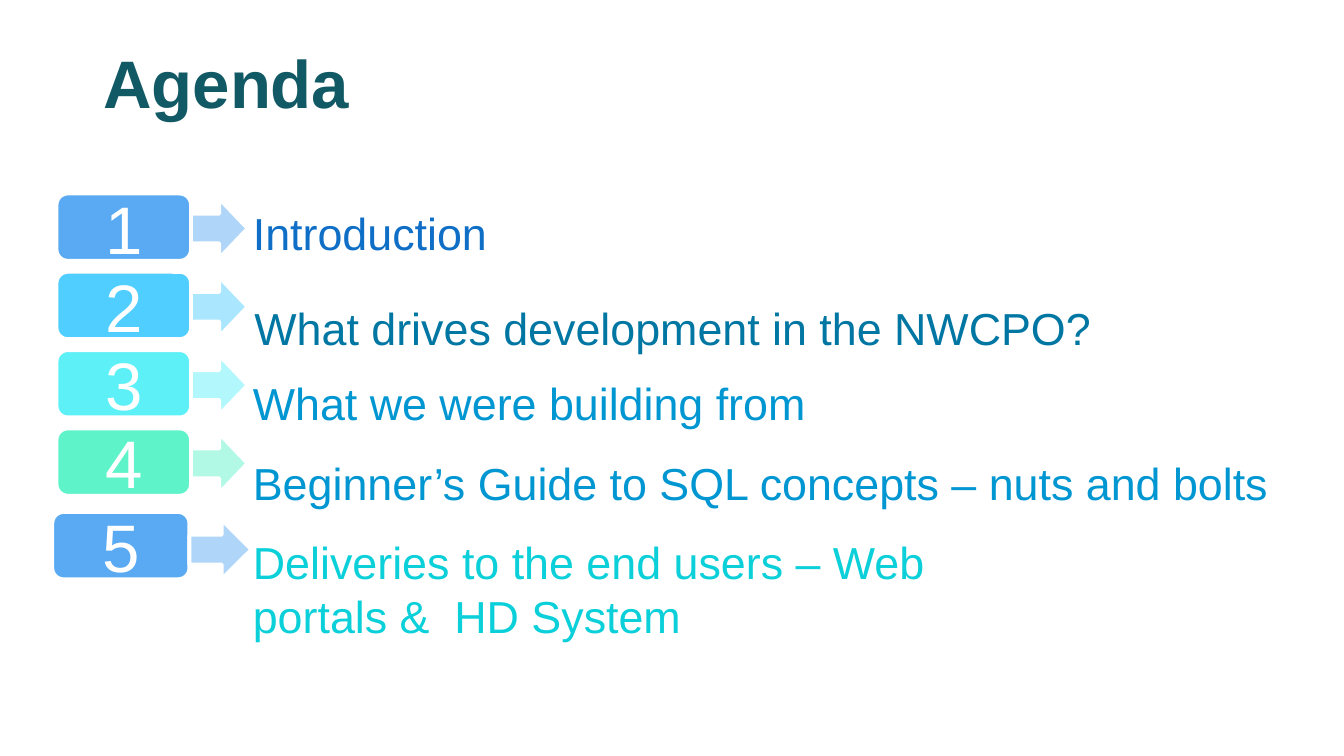
"""Build an agenda slide with five numbered rows."""
from lxml.etree import SubElement
from pptx import Presentation
from pptx.dml.color import RGBColor as Rgb
from pptx.enum.shapes import MSO_SHAPE as Kind
from pptx.enum.text import MSO_ANCHOR as Anchor, PP_ALIGN as Align
from pptx.oxml.ns import qn
from pptx.util import Cm, Pt

HUES = {
    "title": "115964", "white": "FFFFFF",
    "blue": "59AAF2", "sky": "4FCEFF", "aqua": "5EF0F7", "mint": "5FF3CA",
    "navy": "0F6FC6", "teal": "0076A3", "azure": "0096D2", "cyan": "0BD0D9",
}
TITLE = "Agenda"
ROWS = [
    ("Introduction", "blue", "navy", (4.37, 3.71, 18.06, 1.37)),
    ("What drives development in the NWCPO?", "sky", "teal", (4.4, 4.98, 20.04, 1.63)),
    ("What we were building from", "aqua", "azure", (4.37, 6.4, 17.65, 1.78)),
    ("Beginner’s Guide to SQL concepts – nuts and bolts", "mint", "azure",
     (4.37, 7.9, 20.73, 1.8)),
    ("Deliveries to the end users – Web portals &  HD System", "blue", "cyan",
     (4.37, 9.4, 14.48, 2.01)),
]
TOP, STEP = 3.66, 1.48
BADGE = {"left": 1.07, "drop": 0, "wide": 2.54, "high": 1.27}
ARROW = {"left": 3.61, "drop": 0.1, "wide": 1.07, "high": 1.12}
LAST_BADGE = BADGE | {"left": 0.99, "drop": 0.1, "wide": 2.59}
LAST_ARROW = ARROW | {"left": 3.58, "drop": 0.25, "wide": 1.17}
FRAME = {
    "title": {"word_wrap": True, "vertical_anchor": Anchor.MIDDLE},
    "badge": {"word_wrap": True, "vertical_anchor": Anchor.MIDDLE},
    "item": {"word_wrap": True, "vertical_anchor": Anchor.TOP,
             "margin_left": Cm(0.41), "margin_top": Cm(0.71)},
}
FONT = {
    "title": {"name": "Arial", "size": Pt(36), "bold": True},
    "badge": {"name": "Arial", "size": Pt(36)},
    "item": {"name": "Arial", "size": Pt(24)},
}


def apply(thing, vals):
    for key, val in vals.items():
        setattr(thing, key, val)


def write(shape, text, style, hue):
    frame = shape.text_frame
    apply(frame, FRAME[style])
    para = frame.paragraphs[0]
    para.text = text
    apply(para.font, FONT[style])
    para.font.color.rgb = Rgb.from_string(HUES[hue])
    return para


def label(shapes, area, text, style, hue):
    return write(shapes.add_textbox(*map(Cm, area)), text, style, hue)


def block(shapes, kind, size, top, hue):
    area = size["left"], top + size["drop"], size["wide"], size["high"]
    shape = shapes.add_shape(kind, *map(Cm, area))
    shape.shadow.inherit = False
    shape.fill.solid()
    shape.fill.fore_color.rgb = Rgb.from_string(HUES[hue])
    shape.line.color.rgb = Rgb.from_string(HUES["white"])
    shape.line.width = Pt(2)
    return shape


def fade(shape, share):
    tint = shape.element.spPr.find(qn("a:solidFill"))[0]
    SubElement(tint, qn("a:alpha"), val=str(share * 1000))


def main():
    deck = Presentation()
    deck.slide_width, deck.slide_height = Cm(25.4), Cm(14.29)
    shapes = deck.slides.add_slide(deck.slide_layouts[6]).shapes
    label(shapes, (1.7, 0.89, 22.86, 1.32), TITLE, "title", "title")
    for num, (text, hue, ink, area) in enumerate(ROWS, 1):
        top = TOP + STEP * (num - 1)
        last = num == len(ROWS)
        group = shapes.add_group_shape().shapes
        badge = block(group, Kind.ROUNDED_RECTANGLE, LAST_BADGE if last else BADGE, top, hue)
        write(badge, str(num), "badge", "white").alignment = Align.CENTER
        arrow = block(group, Kind.RIGHT_ARROW, LAST_ARROW if last else ARROW, top, hue)
        fade(arrow, 48)
        para = label(shapes, area, text, "item", ink)
        if num == 1:
            para.line_spacing = Pt(14)
    deck.save("out.pptx")


if __name__ == "__main__":
    main()
